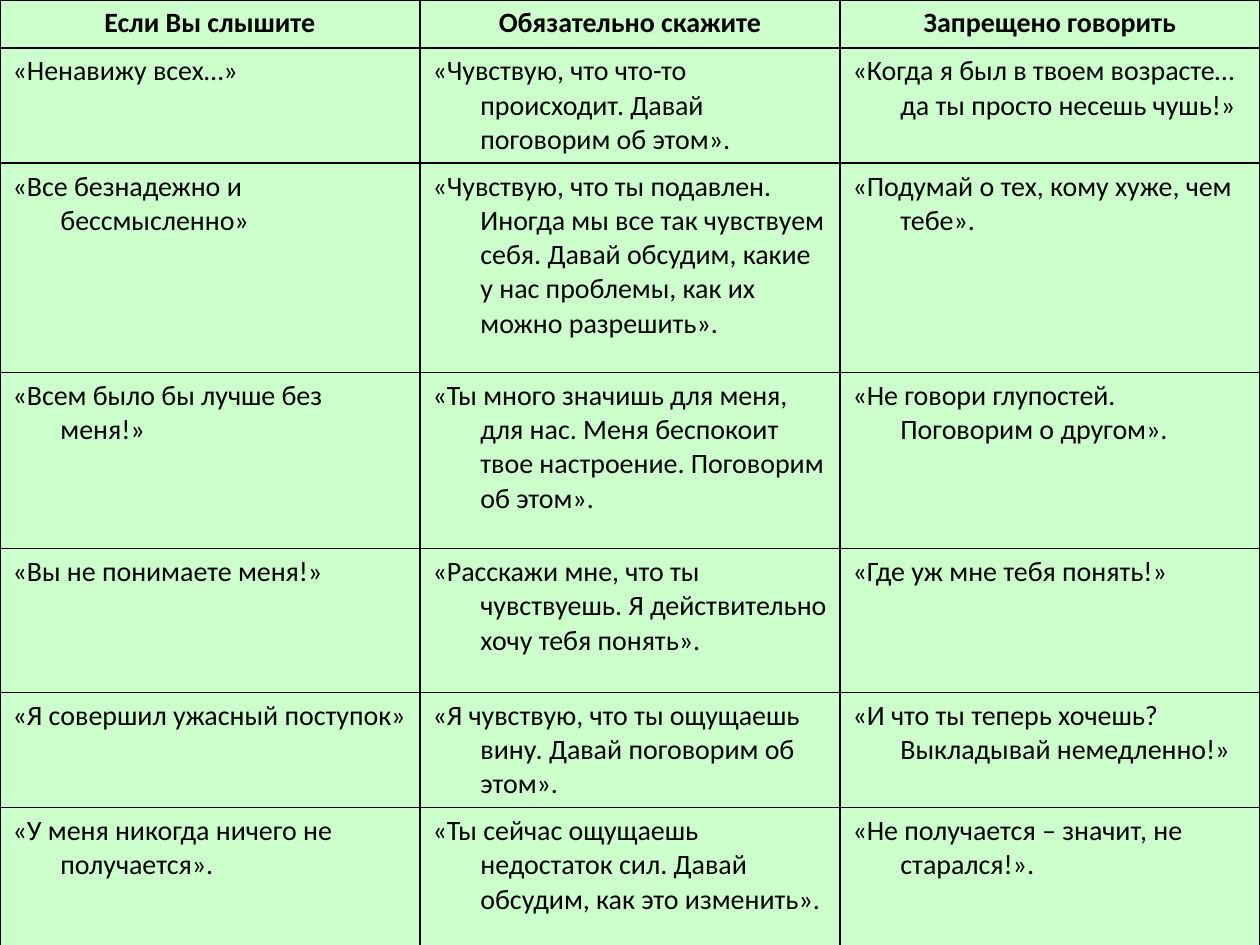
import pptx
import pptx.dml.color
import pptx.enum.text
import pptx.oxml.ns
import pptx.util
from lxml import etree
from pptx.util import Inches

COLORS = {"background": "CCFFCC", "text": "000000", "border": "000000"}
ROW_HEIGHTS = [0.38, 0.89, 1.66, 1.4, 1.14, 0.89, 1.14]
PHRASES = [
    ("Если Вы слышите", "Обязательно скажите", "Запрещено говорить"),
    ("«Ненавижу всех…»",
     "«Чувствую, что что-то происходит. Давай поговорим об этом».",
     "«Когда я был в твоем возрасте… да ты просто несешь чушь!»"),
    ("«Все безнадежно и бессмысленно»",
     "«Чувствую, что ты подавлен. Иногда мы все так чувствуем себя. "
     "Давай обсудим, какие у нас проблемы, как их можно разрешить».",
     "«Подумай о тех, кому хуже, чем тебе»."),
    ("«Всем было бы лучше без меня!»",
     "«Ты много значишь для меня, для нас. Меня беспокоит твое настроение. "
     "Поговорим об этом».",
     "«Не говори глупостей. Поговорим о другом»."),
    ("«Вы не понимаете меня!»",
     "«Расскажи мне, что ты чувствуешь. Я действительно хочу тебя понять».",
     "«Где уж мне тебя понять!»"),
    ("«Я совершил ужасный поступок»",
     "«Я чувствую, что ты ощущаешь вину. Давай поговорим об этом».",
     "«И что ты теперь хочешь? Выкладывай немедленно!»"),
    ("«У меня никогда ничего не получается».",
     "«Ты сейчас ощущаешь недостаток сил. Давай обсудим, как это изменить».",
     "«Не получается – значит, не старался!»."),
]


class SlideBuilder:
    """Holds the text style and the slide being built."""

    def __init__(self, slide, font="Calibri", size=16, indent=0.38):
        self.slide = slide
        self.font = font
        self.size = pptx.util.Pt(size)
        self.indent = Inches(indent)

    def color(self, name):
        return pptx.dml.color.RGBColor.from_string(COLORS[name])

    def background(self):
        fill = self.slide.background.fill
        fill.solid()
        fill.fore_color.rgb = self.color("background")

    def borders(self, cell):
        qn = pptx.oxml.ns.qn
        properties = cell._tc.get_or_add_tcPr()
        for side in ("lnL", "lnR", "lnT", "lnB"):
            line = etree.SubElement(properties, qn("a:" + side), w=str(pptx.util.Pt(1)))
            fill = etree.SubElement(line, qn("a:solidFill"))
            etree.SubElement(fill, qn("a:srgbClr"), val=COLORS["border"])

    def cell(self, cell, text, header):
        self.borders(cell)
        cell.fill.background()
        cell.text_frame.text = text
        paragraph = cell.text_frame.paragraphs[0]
        if header:
            paragraph.alignment = pptx.enum.text.PP_ALIGN.CENTER
        properties = paragraph._p.get_or_add_pPr()
        properties.set("marL", str(self.indent))
        properties.set("indent", str(-self.indent))
        font = paragraph.runs[0].font
        font.name = self.font
        font.size = self.size
        font.bold = header
        font.color.rgb = self.color("text")

    def table(self, rows, heights, width):
        frame = self.slide.shapes.add_table(
            len(rows), len(rows[0]), 0, 0, width, Inches(sum(heights)))
        table = frame.table
        table.horz_banding = False
        for row_index, (texts, height) in enumerate(zip(rows, heights)):
            table.rows[row_index].height = Inches(height)
            for column_index, text in enumerate(texts):
                self.cell(table.cell(row_index, column_index), text, row_index == 0)


def main():
    presentation = pptx.Presentation()
    presentation.slide_width = Inches(10)
    presentation.slide_height = Inches(7.5)
    builder = SlideBuilder(presentation.slides.add_slide(presentation.slide_layouts[6]))
    builder.background()
    builder.table(PHRASES, ROW_HEIGHTS, presentation.slide_width)
    presentation.save("out.pptx")


if __name__ == "__main__":
    main()
